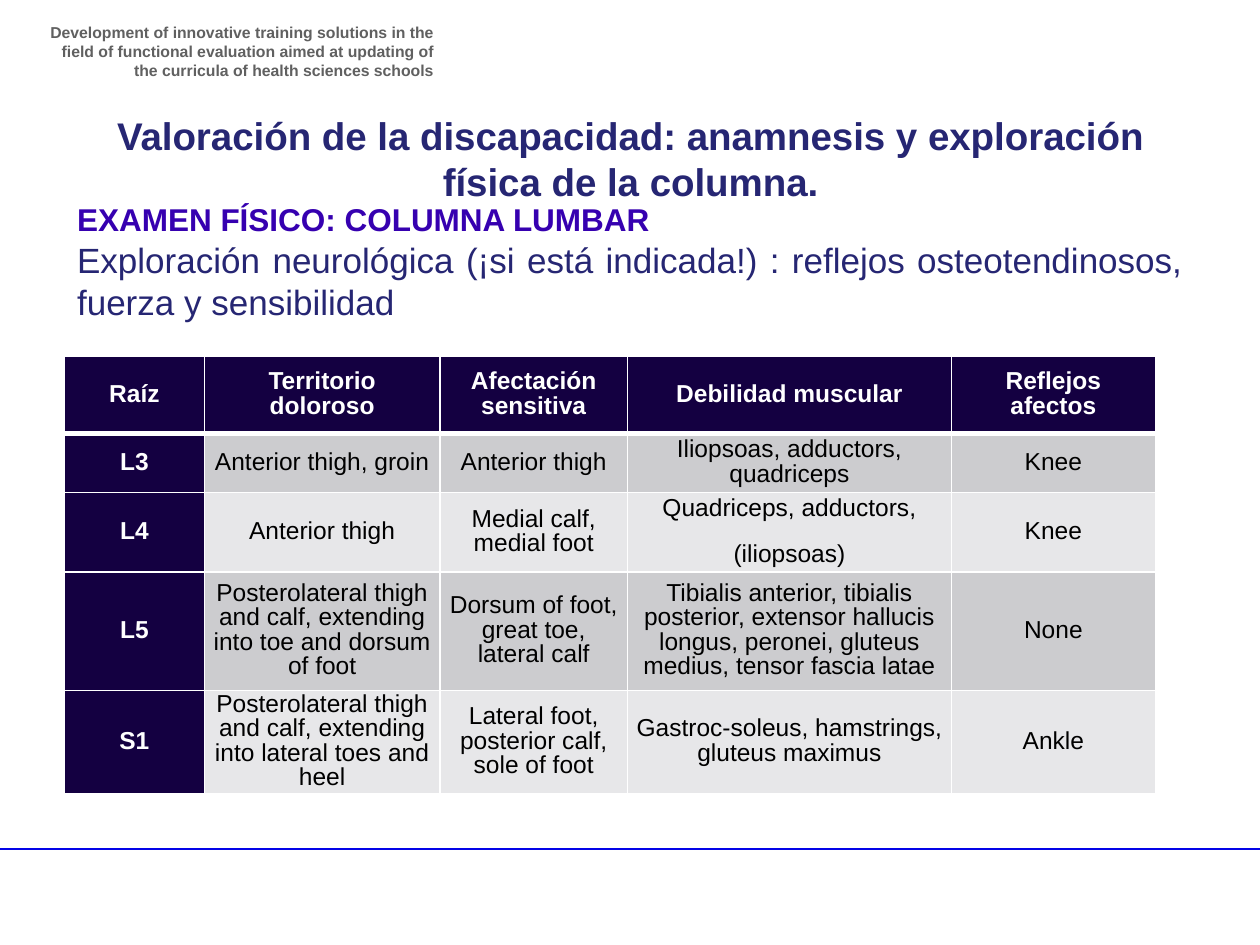
"""Build the lumbar spine neurological examination slide."""
import pptx
import pptx.dml.color
import pptx.enum.shapes
import pptx.enum.text
import pptx.oxml.ns
import pptx.util
from lxml import etree

Cm = pptx.util.Cm
Pt = pptx.util.Pt
ALIGN = pptx.enum.text.PP_ALIGN
ANCHOR = pptx.enum.text.MSO_ANCHOR
qn = pptx.oxml.ns.qn

PROJECT = ("Development of innovative training solutions in the ﬁeld of functional evaluation "
           "aimed at updating of the curricula of health sciences schools")
TITLE = "Valoración de la discapacidad: anamnesis y exploración física de la columna."
SECTION = "EXAMEN FÍSICO: COLUMNA LUMBAR"
TOPIC = ("Exploración neurológica (¡si está indicada!) : reflejos osteotendinosos, "
         "fuerza y sensibilidad")
ROWS = [
    ("Raíz", "Territorio doloroso", "Afectación sensitiva", "Debilidad muscular",
     "Reflejos afectos"),
    ("L3", "Anterior thigh, groin", "Anterior thigh", "Iliopsoas, adductors, quadriceps", "Knee"),
    ("L4", "Anterior thigh", "Medial calf, medial foot", "Quadriceps, adductors,\n(iliopsoas)",
     "Knee"),
    ("L5", "Posterolateral thigh and calf, extending into toe and dorsum of foot",
     "Dorsum of foot, great toe, lateral calf",
     "Tibialis anterior, tibialis posterior, extensor hallucis longus, peronei, "
     "gluteus medius, tensor fascia latae", "None"),
    ("S1", "Posterolateral thigh and calf, extending into lateral toes and heel",
     "Lateral foot, posterior calf, sole of foot",
     "Gastroc-soleus, hamstrings, gluteus maximus", "Ankle"),
]
COLUMN_WIDTHS = [2.82, 4.75, 3.78, 6.53, 4.11]
ROW_HEIGHTS = [1.55, 1.19, 1.6, 2.39, 2.08]

THEME = {
    "font": "Arial",
    "project": (9, "606060"), "title": (22, "262673"),
    "section": (18, "3600B0"), "topic": (20, "262673"),
    "heading": (14, "FFFFFF"), "cell": (14, "000000"),
    "dark": "140041", "bands": ("E7E7E9", "CCCCCF"),
    "border": "FFFFFF", "rule": "0404E6",
}


def color(value):
    return pptx.dml.color.RGBColor.from_string(value)


def format_paragraph(para, role, bold, align):
    size, ink = THEME[role]
    para.alignment = align
    para.space_before = para.space_after = Pt(0)
    for span in para.runs:
        span.font.name = THEME["font"]
        span.font.size = Pt(size)
        span.font.bold = bold
        span.font.color.rgb = color(ink)


def place(box, left, top, width, height, anchor=ANCHOR.TOP):
    box.left, box.top, box.width, box.height = Cm(left), Cm(top), Cm(width), Cm(height)
    box.text_frame.word_wrap = True
    box.text_frame.auto_size = pptx.enum.text.MSO_AUTO_SIZE.NONE
    box.text_frame.vertical_anchor = anchor


def remove_bullet(para):
    properties = para._p.get_or_add_pPr()
    properties.set("marL", "0")
    properties.set("indent", "0")
    etree.SubElement(properties, qn("a:buNone"))


def set_borders(cell, is_header):
    properties = cell._tc.get_or_add_tcPr()
    for side in "LRTB":
        points = 3 if is_header and side == "B" else 1
        line = etree.SubElement(properties, qn(f"a:ln{side}"), w=str(Pt(points)))
        fill = etree.SubElement(line, qn("a:solidFill"))
        etree.SubElement(fill, qn("a:srgbClr"), val=THEME["border"])


def fill_cell(cell, text, row, column):
    is_heading = row == 0 or column == 0
    cell.text_frame.text = text
    cell.vertical_anchor = ANCHOR.MIDDLE
    cell.margin_left = cell.margin_right = Cm(0.18)
    cell.margin_top = cell.margin_bottom = 0
    set_borders(cell, row == 0)
    cell.fill.solid()
    cell.fill.fore_color.rgb = color(THEME["dark"] if is_heading else THEME["bands"][row % 2])
    for index, para in enumerate(cell.text_frame.paragraphs):
        format_paragraph(para, "heading" if is_heading else "cell", is_heading, ALIGN.CENTER)
        para.line_spacing = Pt(14)
        if index:
            para.space_before = Pt(12)


def add_rule(slide, width):
    rule = slide.shapes.add_connector(
        pptx.enum.shapes.MSO_CONNECTOR.STRAIGHT, 0, Cm(17.12), width, Cm(17.12))
    rule.line.color.rgb = color(THEME["rule"])
    rule.line.width = Pt(1)
    etree.SubElement(rule._element.spPr, qn("a:effectLst"))


def add_project(slide):
    box = slide.shapes.add_textbox(0, 0, 0, 0)
    place(box, 0.71, 0.33, 8.28, 1.19)
    box.text_frame.text = PROJECT
    format_paragraph(box.text_frame.paragraphs[0], "project", True, ALIGN.RIGHT)


def add_headings(slide):
    title, body = slide.shapes.title, slide.placeholders[1]
    place(title, 1.3, 2.13, 22.83, 2.11, ANCHOR.MIDDLE)
    title.text_frame.text = TITLE
    format_paragraph(title.text_frame.paragraphs[0], "title", True, ALIGN.CENTER)
    place(body, 1.3, 3.91, 22.81, 3.58)
    body.text_frame.text = f"{SECTION}\n{TOPIC}"
    for para, role in zip(body.text_frame.paragraphs, ("section", "topic")):
        remove_bullet(para)
        format_paragraph(para, role, role == "section", ALIGN.JUSTIFY)


def add_roots_table(slide):
    table = slide.shapes.add_table(
        len(ROWS), len(COLUMN_WIDTHS), Cm(1.3), Cm(7.19),
        Cm(sum(COLUMN_WIDTHS)), Cm(sum(ROW_HEIGHTS))).table
    for column, width in zip(table.columns, COLUMN_WIDTHS):
        column.width = Cm(width)
    for row, height in zip(table.rows, ROW_HEIGHTS):
        row.height = Cm(height)
    for row, texts in enumerate(ROWS):
        for column, text in enumerate(texts):
            fill_cell(table.cell(row, column), text, row, column)


def main():
    deck = pptx.Presentation()
    deck.slide_width, deck.slide_height = Cm(25.4), Cm(19.05)
    page = deck.slides.add_slide(deck.slide_layouts[1])
    add_rule(page, deck.slide_width)
    add_project(page)
    add_headings(page)
    add_roots_table(page)
    deck.save("out.pptx")


if __name__ == "__main__":
    main()
